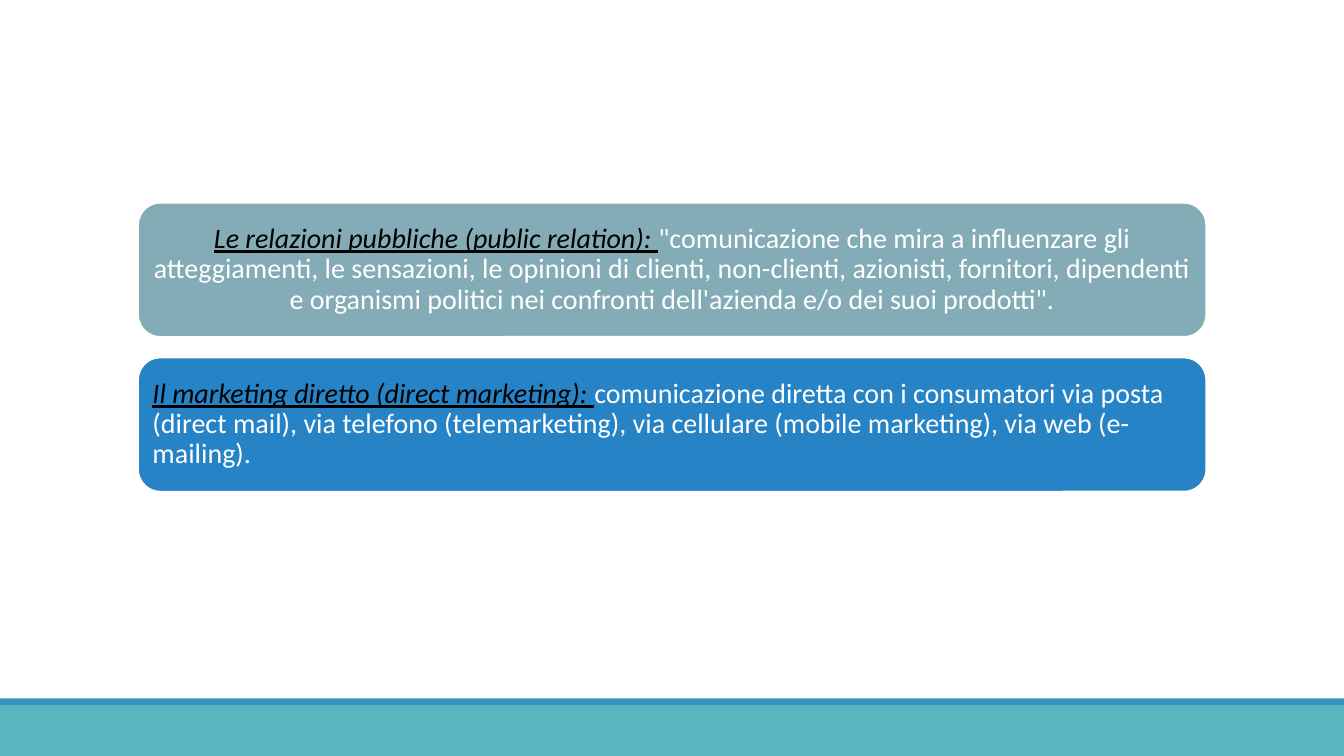
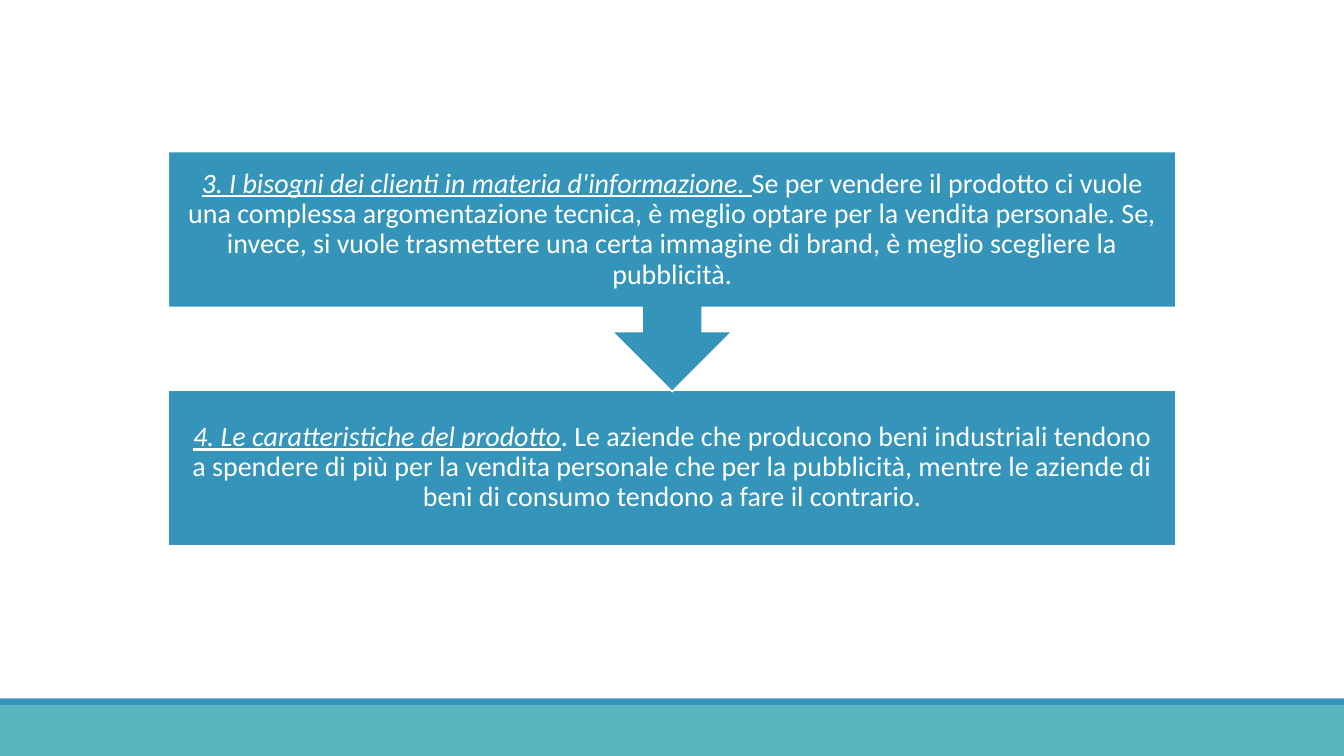
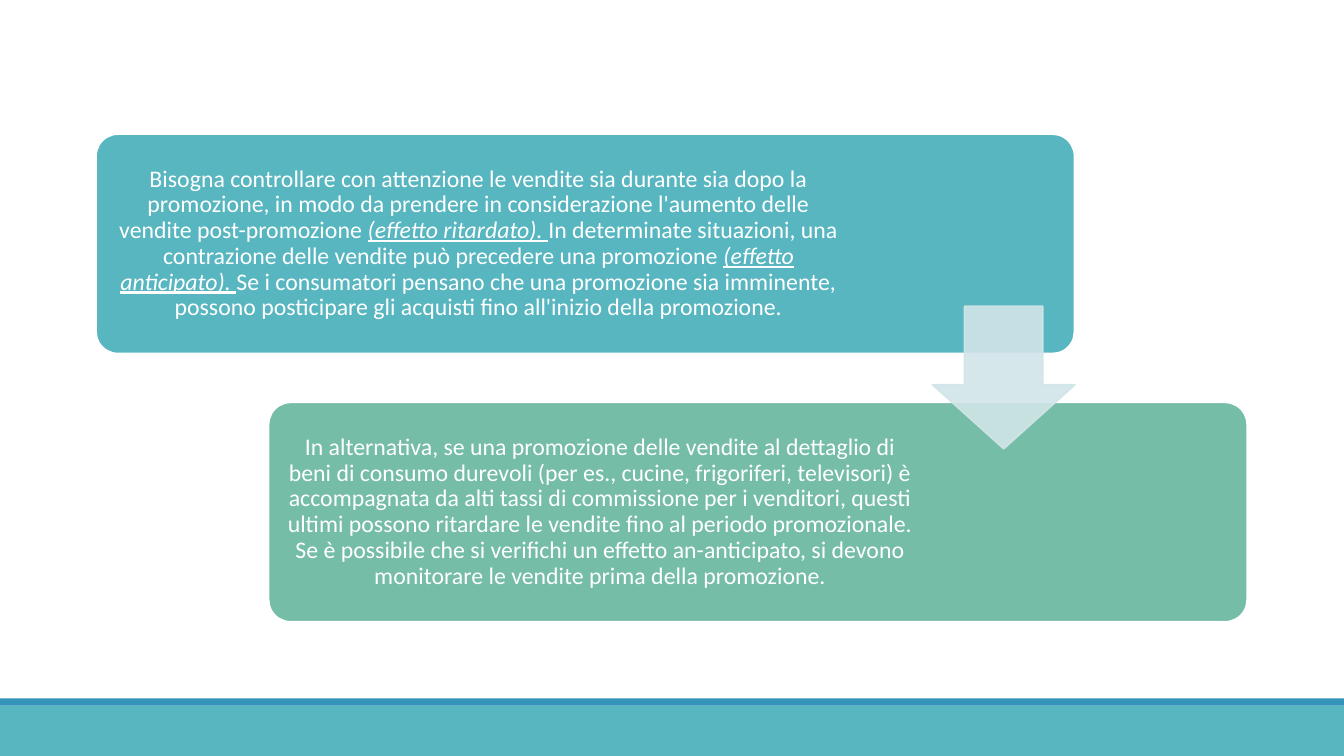
from lxml.etree import SubElement
from pptx import Presentation
from pptx.dml.color import RGBColor
from pptx.enum.shapes import MSO_SHAPE as SHAPE
from pptx.enum.text import MSO_ANCHOR, PP_ALIGN
from pptx.oxml.ns import qn
from pptx.util import Cm, Pt

HUES = {
    "white": "FFFFFF", "black": "000000", "teal": "58B6C0", "sea": "3494BA",
    "slate": "84ACB6", "blue": "2683C6", "green": "75BDA7", "pale": "D1E5E8",
}
FONT = "Calibri"
WIDE, HIGH = 33.87, 19.05

BANDS = [("teal", 17.78, 1.27), ("sea", 17.6, 0.18)]

TOOLS = [
    ("slate", PP_ALIGN.CENTER,
     "_Le relazioni pubbliche (public relation): _\"comunicazione che mira a "
     "influenzare gli atteggiamenti, le sensazioni, le opinioni di clienti, "
     "non-clienti, azionisti, fornitori, dipendenti e organismi politici nei "
     "confronti dell'azienda e/o dei suoi prodotti\"."),
    ("blue", PP_ALIGN.LEFT,
     "_Il marketing diretto (direct marketing): _comunicazione diretta con i "
     "consumatori via posta (direct mail), via telefono (telemarketing), via "
     "cellulare (mobile marketing), via web (e-mailing)."),
]

NEEDS = (
    "_3. I bisogni dei clienti in materia d'informazione. _Se per vendere il "
    "prodotto ci vuole una complessa argomentazione tecnica, è meglio optare "
    "per la vendita personale. Se, invece, si vuole trasmettere una certa "
    "immagine di brand, è meglio scegliere la pubblicità.")
TRAITS = (
    "_4. Le caratteristiche del prodotto_. Le aziende che producono beni "
    "industriali tendono a spendere di più per la vendita personale che per "
    "la pubblicità, mentre le aziende di beni di consumo tendono a fare il "
    "contrario.")

EFFECTS = [
    ("teal", 5.56,
     "Bisogna controllare con attenzione le vendite sia durante sia dopo la "
     "promozione, in modo da prendere in considerazione l'aumento delle "
     "vendite post-promozione _(effetto ritardato). _In determinate "
     "situazioni, una contrazione delle vendite può precedere una promozione "
     "_(effetto anticipato). _Se i consumatori pensano che una promozione sia "
     "imminente, possono posticipare gli acquisti fino all'inizio della "
     "promozione."),
    ("green", 8.13,
     "In alternativa, se una promozione delle vendite al dettaglio di beni di "
     "consumo durevoli (per es., cucine, frigoriferi, televisori) è "
     "accompagnata da alti tassi di commissione per i venditori, questi "
     "ultimi possono ritardare le vendite fino al periodo promozionale. Se è "
     "possibile che si verifichi un effetto an-anticipato, si devono "
     "monitorare le vendite prima della promozione."),
]


def tint(fill, hue, alpha=None):
    fill.solid()
    fill.fore_color.rgb = RGBColor.from_string(HUES[hue])
    if alpha:
        node = fill._xPr.find(qn("a:solidFill"))[0]
        SubElement(node, qn("a:alpha")).set("val", str(alpha * 1000))


def draw(slide, kind, box, hue, edge="white", alpha=None, adj=()):
    shape = slide.shapes.add_shape(kind, *map(Cm, box))
    shape.shadow.inherit = False
    for i, part in enumerate(adj):
        shape.adjustments[i] = part
    tint(shape.fill, hue, alpha)
    if edge:
        shape.line.width = Pt(1.25)
        tint(shape.line.fill, edge, alpha)
    else:
        shape.line.fill.background()
    return shape


def write(shape, text, size=20, mark="white", align=PP_ALIGN.CENTER,
          pad=0.2, right=None):
    frame = shape.text_frame
    frame.word_wrap = True
    frame.vertical_anchor = MSO_ANCHOR.MIDDLE
    frame.margin_left = frame.margin_top = frame.margin_bottom = Cm(pad)
    frame.margin_right = Cm(right or pad)
    para = frame.paragraphs[0]
    para.alignment = align
    para.line_spacing = 0.9
    for i, piece in enumerate(text.split("_")):
        if not piece:
            continue
        run = para.add_run()
        run.text = piece
        key = i % 2 == 1
        run.font.name = FONT
        run.font.size = Pt(size)
        run.font.italic = run.font.underline = key
        run.font.color.rgb = RGBColor.from_string(HUES[mark if key else "white"])


def main():
    deck = Presentation()
    deck.slide_width, deck.slide_height = Cm(WIDE), Cm(HIGH)
    tools, needs, sales = [
        deck.slides.add_slide(deck.slide_layouts[6]) for _ in range(3)]

    for hue, top, high in BANDS:
        band = draw(tools, SHAPE.RECTANGLE, (0, top, WIDE, high), hue, edge=None)
        deck.slide_master.shapes.element.append(band.element)

    for i, (hue, align, text) in enumerate(TOOLS):
        card = draw(tools, SHAPE.ROUNDED_RECTANGLE,
                    (3.48, 5.11 + 3.9 * i, 26.92, 3.38), hue)
        write(card, text, mark="black", align=align)

    left, wide = 4.24, 25.4
    base = draw(needs, SHAPE.RECTANGLE, (left, 9.82, wide, 3.93), "sea")
    write(base, TRAITS, pad=0.41)
    call = draw(needs, SHAPE.DOWN_ARROW_CALLOUT, (left, 3.82, wide, 6.05), "sea")
    write(call, NEEDS, pad=0.41)

    for i, (hue, right, text) in enumerate(EFFECTS):
        card = draw(sales, SHAPE.ROUNDED_RECTANGLE,
                    (2.42 + 4.35 * i, 3.38 + 6.76 * i, 24.66, 5.53), hue,
                    adj=(0.1,))
        write(card, text, size=17, pad=0.18, right=right)
    draw(sales, SHAPE.DOWN_ARROW, (23.5, 7.72, 3.59, 3.59), "pale",
         edge="pale", alpha=90, adj=(0.55, 0.45))

    deck.save("out.pptx")


if __name__ == "__main__":
    main()
